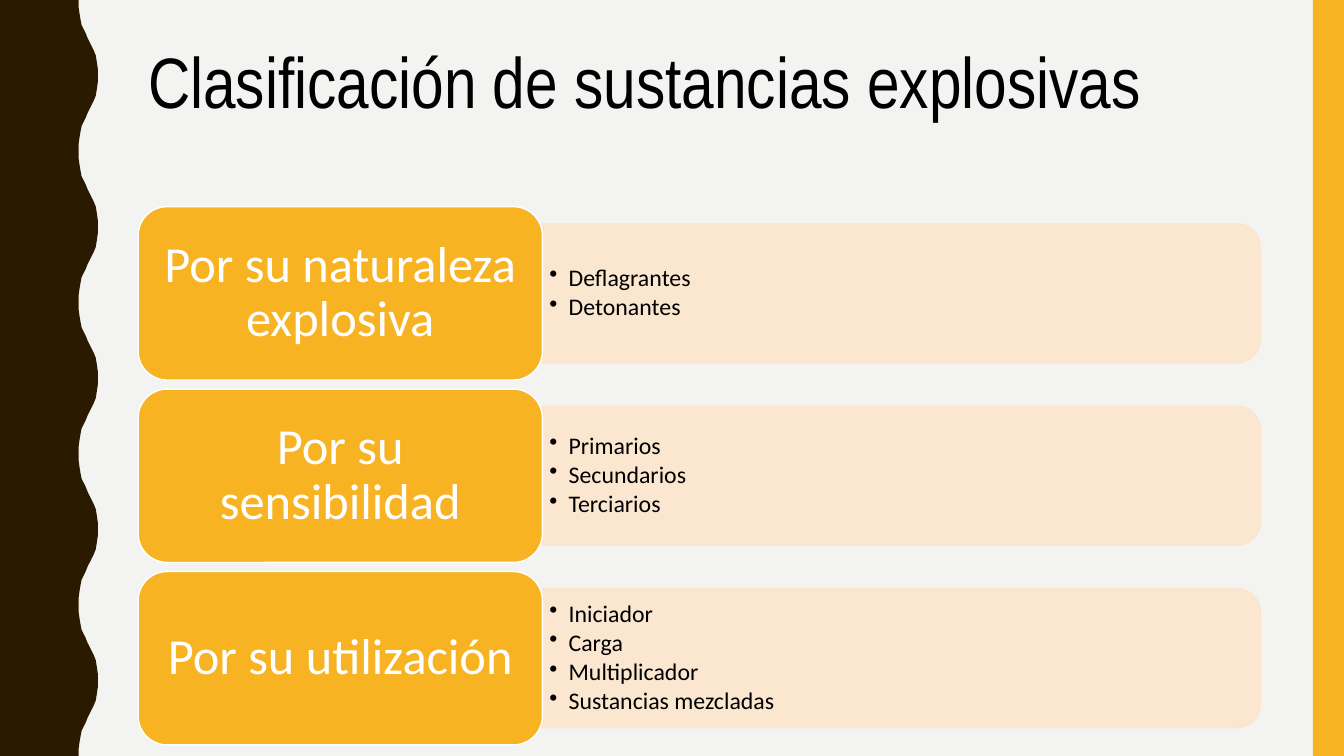
from lxml.etree import SubElement
from pptx import Presentation
from pptx.dml.color import RGBColor
from pptx.enum.shapes import MSO_SHAPE as Shape
from pptx.enum.text import MSO_ANCHOR as Anchor, PP_ALIGN as Align
from pptx.oxml.ns import qn
from pptx.util import Inches, Pt

# Content
TITLE = "Clasificación de sustancias explosivas"
CATEGORIES = [
    ("Por su naturaleza explosiva", ["Deflagrantes", "Detonantes"]),
    ("Por su sensibilidad", ["Primarios", "Secundarios", "Terciarios"]),
    ("Por su utilización",
     ["Iniciador", "Carga", "Multiplicador", "Sustancias mezcladas"]),
]
COLORS = {
    "background": "F3F3F2", "wave": "2A1A00", "accent": "F8B323",
    "panel": "FCE5CD", "text": "000000", "label": "FFFFFF",
}

# Layout in inches
SLIDE_W, SLIDE_H = 13.33, 7.5
LEFT, TOP, ROW_STEP = 1.37, 2.05, 1.81
LABEL_W, LABEL_H = 4.01, 1.72
PANEL_W, PANEL_H = 7.12, 1.38
ITEMS_W, ITEMS_H = 7.06, 1.24
STRIPE_W = 0.31
WAVE_PERIOD = 1.5
# Half a wave, as (x, y) from trough to crest
HALF_WAVE = [
    (0.78, 0), (0.78, 0.07), (0.79, 0.14), (0.8, 0.2), (0.81, 0.25),
    (0.83, 0.29), (0.85, 0.33), (0.87, 0.38), (0.89, 0.42), (0.91, 0.46),
    (0.93, 0.5), (0.95, 0.55), (0.96, 0.61), (0.97, 0.68), (0.97, 0.75),
]


def rgb(name):
    return RGBColor.from_string(COLORS[name])


def paint(shape, fill, line=None):
    shape.shadow.inherit = False
    shape.fill.solid()
    shape.fill.fore_color.rgb = rgb(fill)
    if line:
        shape.line.color.rgb = rgb(line)
        shape.line.width = Pt(1)
    else:
        shape.line.fill.background()


def set_frame(frame, anchor, margin_x, margin_y):
    frame.word_wrap = True
    frame.vertical_anchor = anchor
    frame.margin_left = frame.margin_right = Inches(margin_x)
    frame.margin_top = frame.margin_bottom = Inches(margin_y)


def write(paragraph, text, font, size, color):
    paragraph.text = text
    paragraph.line_spacing = 0.9
    paragraph.font.name = font
    paragraph.font.size = Pt(size)
    paragraph.font.color.rgb = rgb(color)


def add_bullet(paragraph):
    props = paragraph._p.get_or_add_pPr()
    props.set("marL", str(Inches(0.19)))
    props.set("indent", str(-Inches(0.19)))
    SubElement(props, qn("a:buChar"), char="•")


def box(left, top, width, height):
    return [Inches(value) for value in (left, top, width, height)]


prs = Presentation()
prs.slide_width, prs.slide_height = Inches(SLIDE_W), Inches(SLIDE_H)
slide = prs.slides.add_slide(prs.slide_layouts[6])
slide.background.fill.solid()
slide.background.fill.fore_color.rgb = rgb("background")
shapes = slide.shapes

# Wavy left edge
full_wave = HALF_WAVE + [(x, WAVE_PERIOD - y) for x, y in HALF_WAVE[-2::-1]]
edge = [(x, y + turn * WAVE_PERIOD)
        for turn in range(round(SLIDE_H / WAVE_PERIOD)) for x, y in full_wave]
builder = shapes.build_freeform(0, 0)
builder.add_line_segments(
    [(Inches(x), Inches(y)) for x, y in edge + [(0, SLIDE_H)]])
paint(builder.convert_to_shape(), "wave")

# Right stripe
stripe = shapes.add_shape(
    Shape.RECTANGLE, *box(SLIDE_W - STRIPE_W, 0, STRIPE_W, SLIDE_H))
paint(stripe, "accent")

# Title
title = shapes.add_textbox(*box(LEFT, 0.42, 11.13, 1.63)).text_frame
set_frame(title, Anchor.TOP, 0.1, 0.05)
write(title.paragraphs[0], TITLE, "Arial Narrow", 51, "text")

# One row per category
items_left = LEFT + LABEL_W
for row, (category, substances) in enumerate(CATEGORIES):
    top = TOP + row * ROW_STEP
    middle = top + LABEL_H / 2

    # Panel, turned so that its rounded corners face right
    panel = shapes.add_shape(Shape.ROUND_2_SAME_RECTANGLE, *box(
        items_left + (PANEL_W - PANEL_H) / 2, middle - PANEL_W / 2,
        PANEL_H, PANEL_W))
    panel.rotation = 90
    paint(panel, "panel", "panel")
    for color in panel._element.spPr.iter(qn("a:srgbClr")):
        SubElement(color, qn("a:alpha"), val="90000")

    # Bulleted substances
    items = shapes.add_textbox(*box(
        items_left, middle - ITEMS_H / 2, ITEMS_W, ITEMS_H)).text_frame
    set_frame(items, Anchor.MIDDLE, 0.07, 0.04)
    for index, substance in enumerate(substances):
        item = items.add_paragraph() if index else items.paragraphs[0]
        add_bullet(item)
        write(item, substance, "Calibri", 17, "text")
        item.space_after = Pt(2.5)

    # Category label
    label = shapes.add_shape(
        Shape.ROUNDED_RECTANGLE, *box(LEFT, top, LABEL_W, LABEL_H))
    paint(label, "accent", "label")
    set_frame(label.text_frame, Anchor.MIDDLE, 0.15, 0.07)
    heading = label.text_frame.paragraphs[0]
    write(heading, category, "Calibri", 36, "label")
    heading.alignment = Align.CENTER

prs.save("out.pptx")
